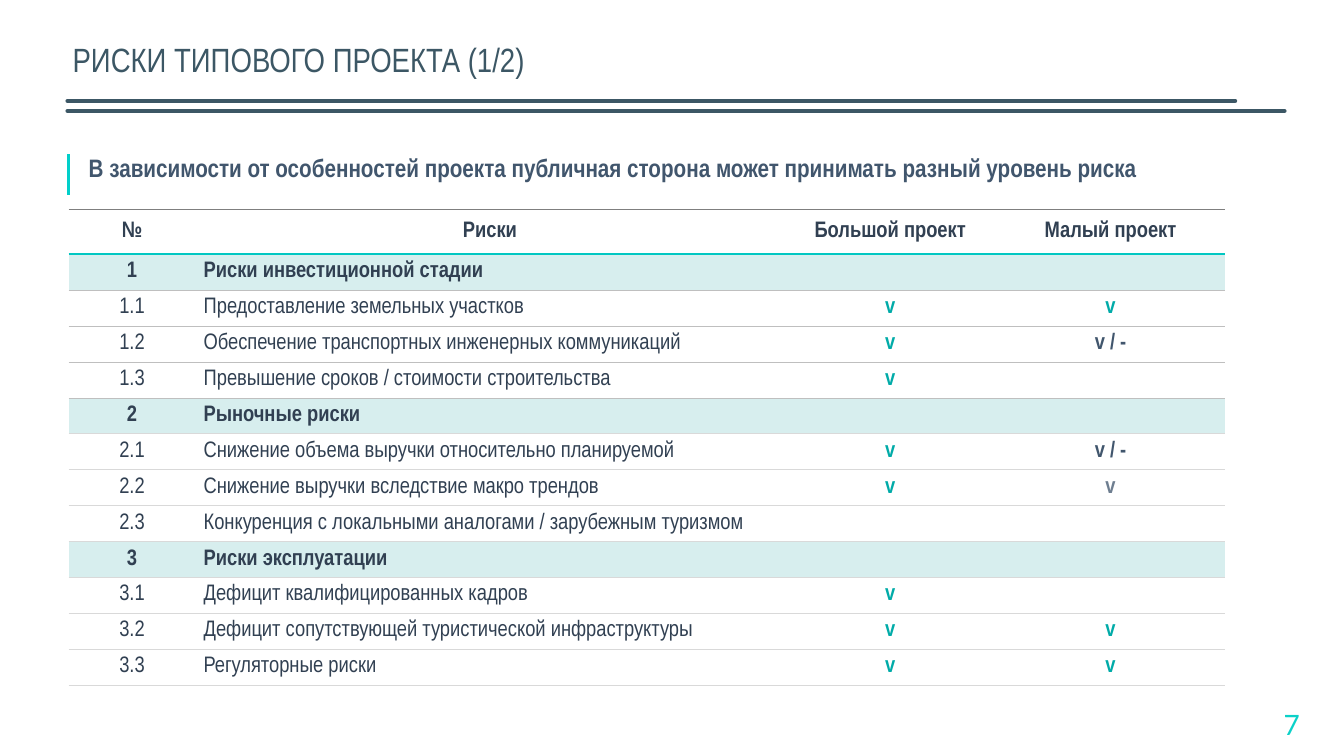
from lxml import etree
from pptx import Presentation
from pptx.dml.color import RGBColor
from pptx.enum import shapes, text
from pptx.oxml import ns
from pptx.util import Inches, Pt

SLATE = RGBColor(0x3C, 0x57, 0x65)
NAVY = RGBColor(0x31, 0x40, 0x52)
STEEL = RGBColor(0x41, 0x56, 0x6D)
MUTED = RGBColor(0x6E, 0x7E, 0x90)
CHECK = RGBColor(0x01, 0xAB, 0xA8)
AQUA = RGBColor(0x0B, 0xD1, 0xC8)
ACCENT = RGBColor(0x01, 0xCF, 0xCA)
HEADER_RULE = RGBColor(0x01, 0xC7, 0xC2)
TOP_RULE = RGBColor(0x7F, 0x7F, 0x7F)
SECTION_RULE = RGBColor(0xBF, 0xBF, 0xBF)
ROW_RULE = RGBColor(0xD9, 0xD9, 0xD9)
SECTION_FILL = RGBColor(0xD7, 0xEE, 0xEE)

NARROW = "Arial Narrow"
NO_STYLE = "{2D5ABB26-0587-4C30-8999-92F81FD0307C}"
LEFT, CENTER, RIGHT = text.PP_ALIGN.LEFT, text.PP_ALIGN.CENTER, text.PP_ALIGN.RIGHT
MIDDLE = text.MSO_ANCHOR.MIDDLE

HEADINGS = ("№", "Риски", "Большой проект", "Малый проект")
COLUMN_WIDTHS = (1.26, 5.84, 2.1, 2.27)
HEADER_HEIGHT = 0.44
BODY_HEIGHT = 4.28
RISKS = (
    ("1", "Риски инвестиционной стадии", "", ""),
    ("1.1", "Предоставление земельных участков", "v", "v"),
    ("1.2", "Обеспечение транспортных инженерных коммуникаций", "v", "v / -"),
    ("1.3", "Превышение сроков / стоимости строительства", "v", ""),
    ("2", "Рыночные риски", "", ""),
    ("2.1", "Снижение объема выручки относительно планируемой", "v", "v / -"),
    ("2.2", "Снижение выручки вследствие макро трендов", "v", "v"),
    ("2.3", "Конкуренция с локальными аналогами / зарубежным туризмом", "", ""),
    ("3", "Риски эксплуатации", "", ""),
    ("3.1", "Дефицит квалифицированных кадров", "v", ""),
    ("3.2", "Дефицит сопутствующей туристической инфраструктуры", "v", "v"),
    ("3.3", "Регуляторные риски", "v", "v"),
)
MUTED_RISK = "2.2"


def write_text(frame, content, size=16, color=NAVY, bold=False, font=NARROW,
               align=LEFT, spacing=None):
    """Write one formatted paragraph into a text frame."""
    paragraph = frame.paragraphs[0]
    paragraph.alignment = align
    if spacing:
        paragraph.line_spacing = spacing
    if not content:
        paragraph._p.get_or_add_endParaRPr().set("sz", str(size * 100))
        return paragraph
    run = paragraph.add_run()
    run.text = content
    run.font.size = Pt(size)
    run.font.name = font
    run.font.bold = bold
    run.font.color.rgb = color
    return paragraph


def add_rule(slide, y, right):
    """Draw a round-ended horizontal rule below the title."""
    rule = slide.shapes.add_connector(
        shapes.MSO_CONNECTOR.STRAIGHT, Inches(0.67), Inches(y), Inches(right), Inches(y))
    rule.line.color.rgb = SLATE
    rule.line.width = Pt(3)
    rule.line._get_or_add_ln().set("cap", "rnd")
    etree.SubElement(rule._element.spPr, ns.qn("a:effectLst"))


def add_title(slide, content):
    """Place and format the title placeholder."""
    title = slide.shapes.title
    title.left, title.top = Inches(0.62), Inches(0.32)
    title.width, title.height = Inches(11.5), Inches(0.58)
    title.text_frame.vertical_anchor = MIDDLE
    title.text_frame.auto_size = text.MSO_AUTO_SIZE.NONE
    write_text(title.text_frame, content, size=24, color=SLATE, spacing=0.9)


def add_page_number(slide, number):
    """Add the page number at the bottom right."""
    box = slide.shapes.add_textbox(Inches(9.99), Inches(6.99), Inches(3), Inches(0.4))
    box.text_frame.word_wrap = True
    box.text_frame.vertical_anchor = MIDDLE
    write_text(box.text_frame, number, size=20, color=AQUA, font="Lato", align=RIGHT)


def add_plain_table(slide, left, top, widths, heights):
    """Add a table without a banded style."""
    frame = slide.shapes.add_table(
        len(heights), len(widths), Inches(left), Inches(top),
        Inches(sum(widths)), Inches(sum(heights)))
    table = frame.table
    table.first_row = table.horz_banding = False
    table._tbl.tblPr.find(ns.qn("a:tableStyleId")).text = NO_STYLE
    for column, width in zip(table.columns, widths):
        column.width = Inches(width)
    for row, height in zip(table.rows, heights):
        row.height = Inches(height)
    return table


def set_border(cell, side, color, width):
    """Draw one side of a cell: L, R, T or B."""
    line = etree.SubElement(cell._tc.get_or_add_tcPr(), ns.qn(f"a:ln{side}"), w=str(Pt(width)))
    fill = etree.SubElement(line, ns.qn("a:solidFill"))
    etree.SubElement(fill, ns.qn("a:srgbClr"), val=str(color))


def fill_cell(cell, color=None):
    """Fill a cell, or leave it clear."""
    if color is None:
        cell.fill.background()
    else:
        cell.fill.solid()
        cell.fill.fore_color.rgb = color


def add_statement(slide, content):
    """Add the key statement with an accent bar at its left."""
    cell = add_plain_table(slide, 0.68, 1.53, (11.13,), (0.38,)).cell(0, 0)
    set_border(cell, "L", ACCENT, 3)
    fill_cell(cell)
    paragraph = write_text(cell.text_frame, content, size=18, color=STEEL, bold=True)
    paragraph._p.get_or_add_pPr().set("marL", str(Inches(0.1)))


def rule_below(row):
    """Return the colour and width of the line under a table row."""
    if row == 0:
        return HEADER_RULE, 1.5
    return (SECTION_RULE, 0.25) if row < 5 else (ROW_RULE, 0.5)


def mark_color(number, column, mark):
    """Return the colour of a risk level mark."""
    if mark == "v / -":
        return STEEL
    return MUTED if number == MUTED_RISK and column == 3 else CHECK


def add_risk_table(slide):
    """Add the table of risks by project size."""
    heights = [HEADER_HEIGHT] + [BODY_HEIGHT / len(RISKS)] * len(RISKS)
    table = add_plain_table(slide, 0.68, 2.08, COLUMN_WIDTHS, heights)
    for row, values in enumerate((HEADINGS, *RISKS)):
        header = row == 0
        section = not header and "." not in values[0]
        for column, value in enumerate(values):
            cell = table.cell(row, column)
            cell.vertical_anchor = MIDDLE
            cell.margin_left = cell.margin_right = Inches(0.08)
            cell.margin_top = cell.margin_bottom = Inches(0 if header else 0.04)
            set_border(cell, "T", *((TOP_RULE, 0.75) if header else rule_below(row - 1)))
            set_border(cell, "B", *rule_below(row))
            fill_cell(cell, SECTION_FILL if section else None)
            mark = not header and column > 1
            write_text(
                cell.text_frame, value,
                color=mark_color(values[0], column, value) if mark else NAVY,
                bold=header or section or mark,
                align=LEFT if column == 1 and not header else CENTER,
                spacing=Pt(15) if header else None)


def main():
    """Build and save the slide."""
    presentation = Presentation()
    presentation.slide_width, presentation.slide_height = Inches(13.33), Inches(7.5)
    slide = presentation.slides.add_slide(presentation.slide_layouts[5])
    add_rule(slide, 1.1, 12.74)
    add_rule(slide, 1, 12.25)
    add_page_number(slide, "7")
    add_title(slide, "РИСКИ ТИПОВОГО ПРОЕКТА (1/2)")
    add_risk_table(slide)
    add_statement(slide, "В зависимости от особенностей проекта публичная сторона "
                         "может принимать разный уровень риска")
    presentation.save("out.pptx")


if __name__ == "__main__":
    main()
